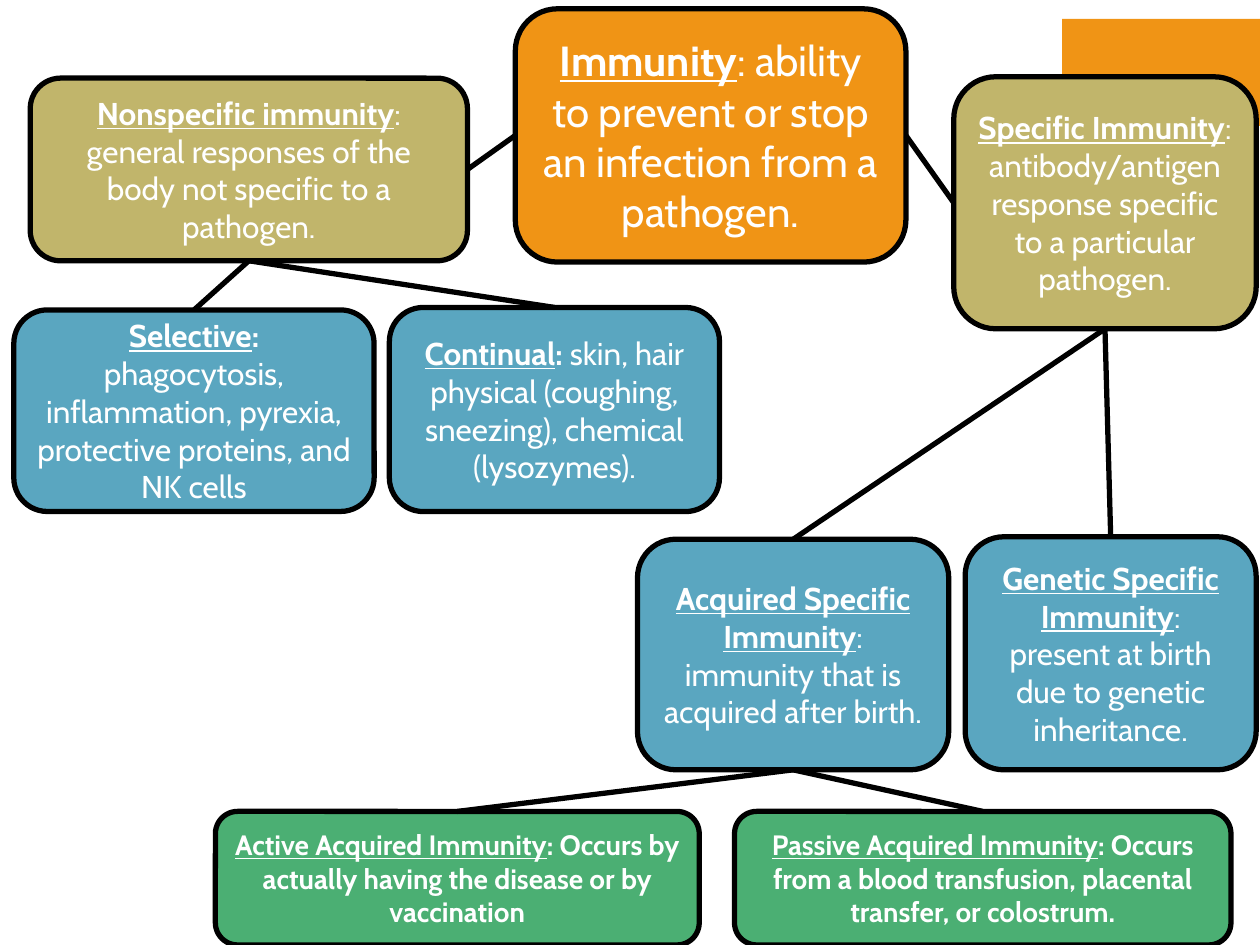
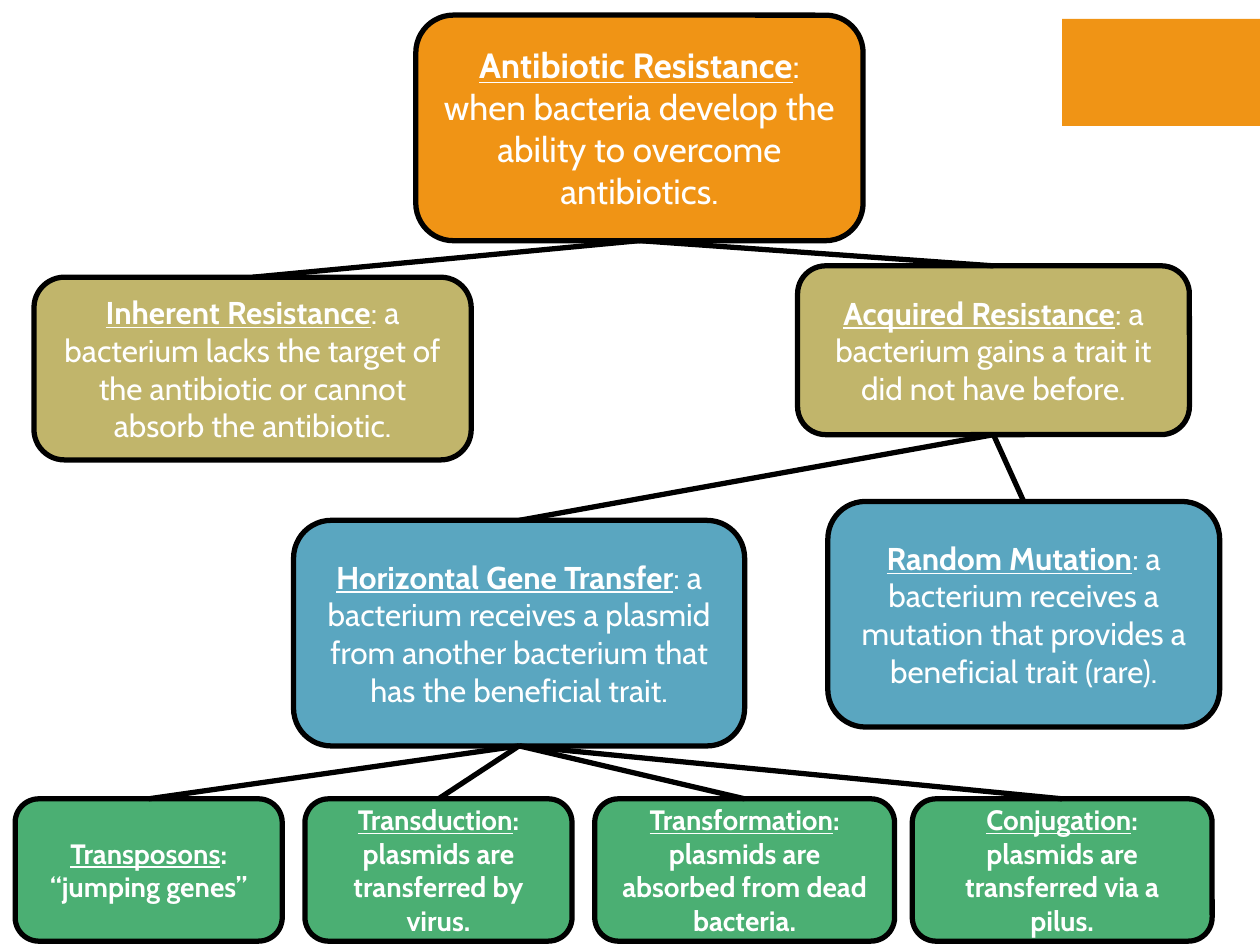
from pptx import Presentation
from pptx.dml.color import RGBColor
from pptx.enum.shapes import MSO_CONNECTOR, MSO_SHAPE
from pptx.enum.text import MSO_ANCHOR, PP_ALIGN
from pptx.oxml.ns import qn
from pptx.util import Inches, Pt
from lxml.etree import SubElement

# Shared look
FONT = "Cabin"
ORANGE, OLIVE, BLUE, GREEN = "F09415", "C1B56B", "5AA6C0", "4BAF73"
WHITE, BLACK = "FFFFFF", "000000"
OUTLINE = Pt(3)
CORNER_BAND = (8.43, 0.15, 1.57, 0.85)
TOP, LEFT, BOTTOM, RIGHT = range(4)  # connection sites of a box


def color(hex_code):
    return RGBColor.from_string(hex_code)


def add_block(slide, preset, bounds, fill):
    shape = slide.shapes.add_shape(preset, *[Inches(value) for value in bounds])
    shape.shadow.inherit = False
    shape.fill.solid()
    shape.fill.fore_color.rgb = color(fill)
    return shape


# Each box: fill, size, bounds, term, bold text, plain text
immunity_boxes = [
    (ORANGE, 24, (4.09, 0.07, 3.1, 2.01), "Immunity", "",
     ": ability to prevent or stop an infection from a pathogen."),
    (OLIVE, 18, (0.24, 0.62, 3.47, 1.45), "Nonspecific immunity", "",
     ": general responses of the body not specific to a pathogen."),
    (OLIVE, 18, (7.57, 0.61, 2.4, 2), "Specific Immunity", "",
     ": antibody/antigen response specific to a particular pathogen."),
    (BLUE, 18, (7.66, 4.26, 2.31, 1.85), "Genetic Specific Immunity", "",
     ": present at birth due to genetic inheritance."),
    (BLUE, 18, (5.06, 4.28, 2.47, 1.83), "Acquired Specific Immunity", "",
     ": immunity that is acquired after birth."),
    (GREEN, 16, (5.83, 6.44, 3.94, 1.06), "Passive Acquired Immunity",
     ": Occurs from a blood transfusion, placental transfer, or colostrum.", ""),
    (GREEN, 16, (1.71, 6.44, 3.84, 1.06), "Active Acquired Immunity",
     ": Occurs by actually having the disease or by vaccination", ""),
    (BLUE, 18, (0.11, 2.46, 2.86, 1.6), "Selective", ": ",
     "phagocytosis, inflammation, pyrexia, protective proteins, and NK cells"),
    (BLUE, 18, (3.09, 2.44, 2.62, 1.62), "Continual", ": ",
     "skin, hair physical (coughing, sneezing), chemical (lysozymes)."),
]
resistance_boxes = [
    (ORANGE, 20, (3.3, 0.12, 3.55, 1.79), "Antibiotic Resistance", "",
     ": when bacteria develop the ability to overcome antibiotics."),
    (OLIVE, 18, (0.27, 2.2, 3.47, 1.45), "Inherent Resistance", "",
     ": a bacterium lacks the target of the antibiotic or cannot absorb the antibiotic."),
    (OLIVE, 18, (6.33, 2.11, 3.11, 1.34), "Acquired Resistance", "",
     ": a bacterium gains a trait it did not have before."),
    (BLUE, 18, (6.57, 3.98, 3.11, 1.79), "Random Mutation", "",
     ": a bacterium receives a mutation that provides a beneficial trait (rare)."),
    (BLUE, 18, (2.33, 4.13, 3.58, 1.79), "Horizontal Gene Transfer", "",
     ": a bacterium receives a plasmid from another bacterium that has the beneficial trait."),
    (GREEN, 16, (7.24, 6.34, 2.38, 1.13), "Conjugation",
     ": plasmids are transferred via a pilus.", ""),
    (GREEN, 16, (4.72, 6.34, 2.38, 1.13), "Transformation",
     ": plasmids are absorbed from dead bacteria.", ""),
    (GREEN, 16, (2.42, 6.34, 2.12, 1.13), "Transduction",
     ": plasmids are transferred by virus.", ""),
    (GREEN, 16, (0.12, 6.34, 2.12, 1.13), "Transposons", ": “jumping genes”", ""),
]

# Each link: parent, site on parent, site on children, children
immunity_links = [
    ("Immunity", RIGHT, LEFT, ["Specific Immunity"]),
    ("Immunity", LEFT, RIGHT, ["Nonspecific immunity"]),
    ("Specific Immunity", BOTTOM, TOP,
     ["Acquired Specific Immunity", "Genetic Specific Immunity"]),
    ("Acquired Specific Immunity", BOTTOM, TOP,
     ["Passive Acquired Immunity", "Active Acquired Immunity"]),
    ("Nonspecific immunity", BOTTOM, TOP, ["Selective", "Continual"]),
]
resistance_links = [
    ("Antibiotic Resistance", BOTTOM, TOP,
     ["Acquired Resistance", "Inherent Resistance"]),
    ("Acquired Resistance", BOTTOM, TOP,
     ["Horizontal Gene Transfer", "Random Mutation"]),
    ("Horizontal Gene Transfer", BOTTOM, TOP,
     ["Conjugation", "Transformation", "Transduction", "Transposons"]),
]

presentation = Presentation()
presentation.slide_width = Inches(10)
presentation.slide_height = Inches(7.5)

for boxes, links in [(immunity_boxes, immunity_links),
                     (resistance_boxes, resistance_links)]:
    slide = presentation.slides.add_slide(presentation.slide_layouts[6])

    # Corner band
    band = add_block(slide, MSO_SHAPE.RECTANGLE, CORNER_BAND, ORANGE)
    band.line.fill.background()

    # Concept boxes
    shapes = {}
    for fill, size, bounds, term, bold_text, plain_text in boxes:
        shape = add_block(slide, MSO_SHAPE.ROUNDED_RECTANGLE, bounds, fill)
        shape.line.color.rgb = color(BLACK)
        shape.line.width = OUTLINE
        shapes[term] = shape
        shape.text_frame.word_wrap = True
        shape.text_frame.vertical_anchor = MSO_ANCHOR.MIDDLE
        paragraph = shape.text_frame.paragraphs[0]
        paragraph.alignment = PP_ALIGN.CENTER
        for text, bold, underline in [(term, True, True), (bold_text, True, False),
                                      (plain_text, False, False)]:
            if not text:
                continue
            run = paragraph.add_run()
            run.text = text
            run.font.name = FONT
            run.font.size = Pt(size)
            run.font.bold = bold
            run.font.underline = underline
            run.font.color.rgb = color(WHITE)

    # Links glued to the boxes
    for parent, parent_site, child_site, children in links:
        for child in children:
            connector = slide.shapes.add_connector(MSO_CONNECTOR.STRAIGHT, 0, 0, 0, 0)
            connector.begin_connect(shapes[parent], parent_site)
            connector.end_connect(shapes[child], child_site)
            connector.line.color.rgb = color(BLACK)
            connector.line.width = OUTLINE
            SubElement(connector.element.spPr, qn("a:effectLst"))

presentation.save("out.pptx")
